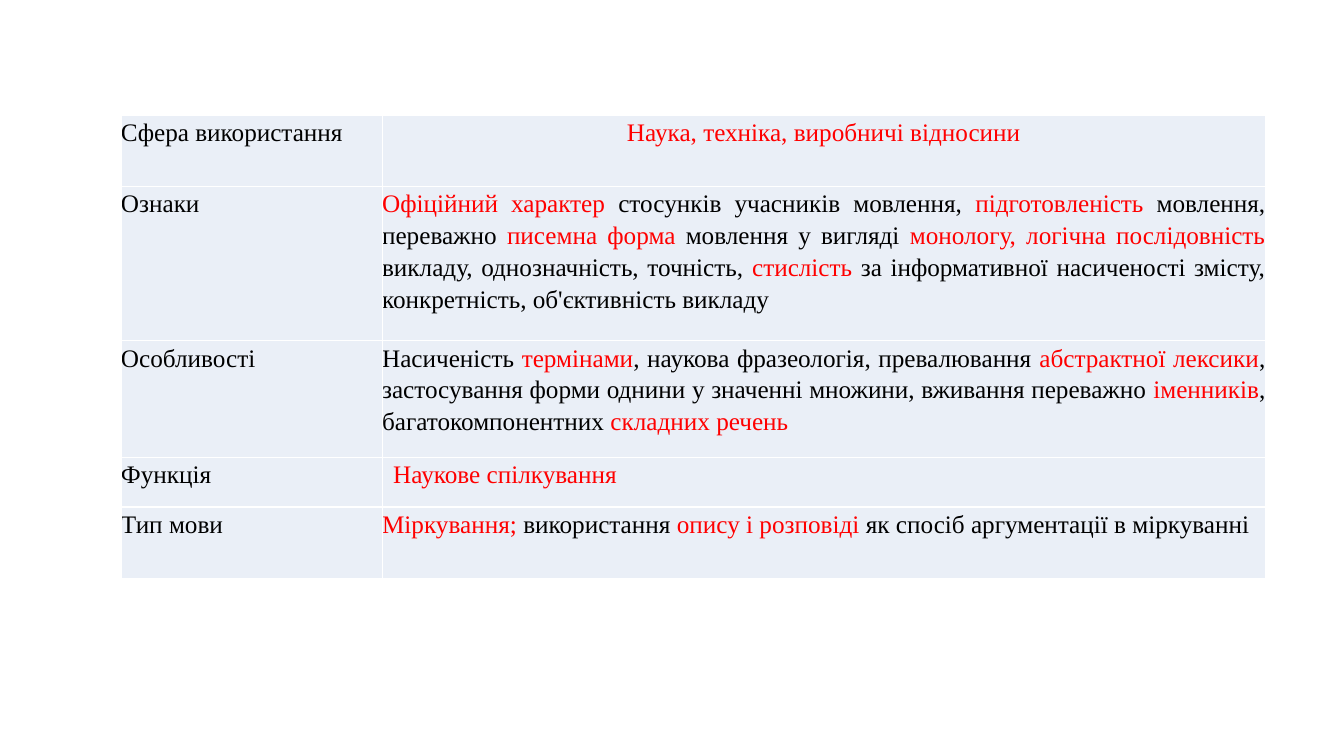
from dataclasses import dataclass

from lxml import etree
from pptx import Presentation
from pptx import util as u
from pptx.dml import color
from pptx.enum import text
from pptx.oxml import ns


@dataclass(frozen=True)
class Theme:
    font: str = "Times New Roman"
    size: float = 18
    line_spacing: float = 1.14
    ink: str = "000000"
    accent: str = "FF0000"
    cell: str = "EAEFF7"
    border: str = "FFFFFF"
    border_width: float = 1


@dataclass(frozen=True)
class Box:
    left: float
    top: float
    width: float
    height: float


THEME = Theme()
JUSTIFY = text.PP_ALIGN.JUSTIFY
CENTER = text.PP_ALIGN.CENTER
LABEL_WIDTH = 2.59

# Asterisks enclose highlighted words.
STYLE_ROWS = [
    (0.71, "Сфера використання", "*Наука, техніка, виробничі відносини*", {"align": CENTER}),
    (1.53, "Ознаки",
     "*Офіційний характер *стосунків учасників мовлення, *підготовленість *мовлення, "
     "переважно *писемна форма *мовлення у вигляді *монологу, логічна послідовність *"
     "викладу, однозначність, точність, *стислість* за інформативної насиченості змісту, "
     "конкретність, об'єктивність викладу", {}),
    (1.16, "Особливості",
     "Насиченість *термінами*, наукова фразеологія, превалювання *абстрактної лексики*, "
     "застосування форми однини у значенні множини, вживання переважно *іменників*, "
     "багатокомпонентних *складних речень*", {}),
    (0.49, "Функція", "*Наукове спілкування*", {"indent": 0.11}),
    (0.71, "Тип мови",
     "*Міркування; *використання *опису і розповіді *як спосіб аргументації в міркуванні", {}),
]


def write_text(frame, content, align=JUSTIFY, indent=0):
    para = frame.paragraphs[0]
    para.alignment = align
    para.line_spacing = THEME.line_spacing
    if indent:
        properties = para._p.get_or_add_pPr()
        properties.set("marL", "0")
        properties.set("indent", str(u.Inches(indent)))
    for position, words in enumerate(content.split("*")):
        if words:
            span = para.add_run()
            span.text = words
            span.font.name = THEME.font
            span.font.size = u.Pt(THEME.size)
            shade = THEME.accent if position % 2 else THEME.ink
            span.font.color.rgb = color.RGBColor.from_string(shade)


def add_borders(cell):
    properties = cell._tc.get_or_add_tcPr()
    for side in ("lnL", "lnR", "lnT", "lnB"):
        line = etree.SubElement(properties, ns.qn(f"a:{side}"), w=str(u.Pt(THEME.border_width)))
        fill = etree.SubElement(line, ns.qn("a:solidFill"))
        etree.SubElement(fill, ns.qn("a:srgbClr"), val=THEME.border)


def fill_cell(cell, content, **text_format):
    cell.margin_left = cell.margin_right = cell.margin_top = cell.margin_bottom = 0
    add_borders(cell)
    cell.fill.solid()
    cell.fill.fore_color.rgb = color.RGBColor.from_string(THEME.cell)
    write_text(cell.text_frame, content, **text_format)


def add_style_table(slide, box):
    frame = slide.shapes.add_table(
        len(STYLE_ROWS), 2,
        u.Inches(box.left), u.Inches(box.top), u.Inches(box.width), u.Inches(box.height))
    table = frame.table
    table.first_row = table.horz_banding = False
    for column, width in zip(table.columns, (LABEL_WIDTH, box.width - LABEL_WIDTH)):
        column.width = u.Inches(width)
    for index, (height, label, description, text_format) in enumerate(STYLE_ROWS):
        table.rows[index].height = u.Inches(height)
        fill_cell(table.cell(index, 0), label)
        fill_cell(table.cell(index, 1), description, **text_format)


def main():
    deck = Presentation()
    deck.slide_width = u.Inches(13.33)
    deck.slide_height = u.Inches(7.5)
    slide = deck.slides.add_slide(deck.slide_layouts[6])
    total_height = sum(row[0] for row in STYLE_ROWS)
    add_style_table(slide, Box(1.2, 1.14, 11.35, total_height))
    deck.save("out.pptx")


if __name__ == "__main__":
    main()
